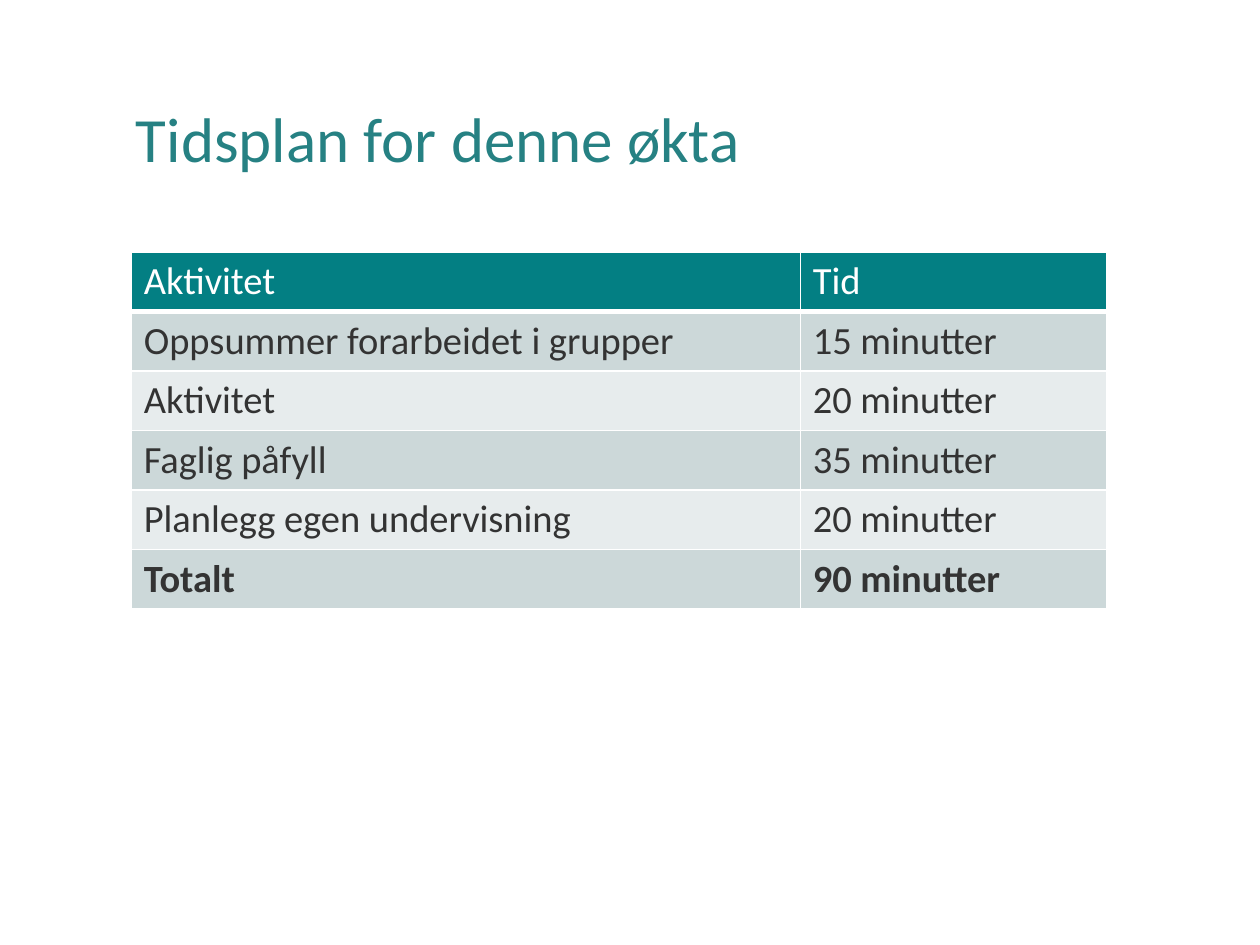
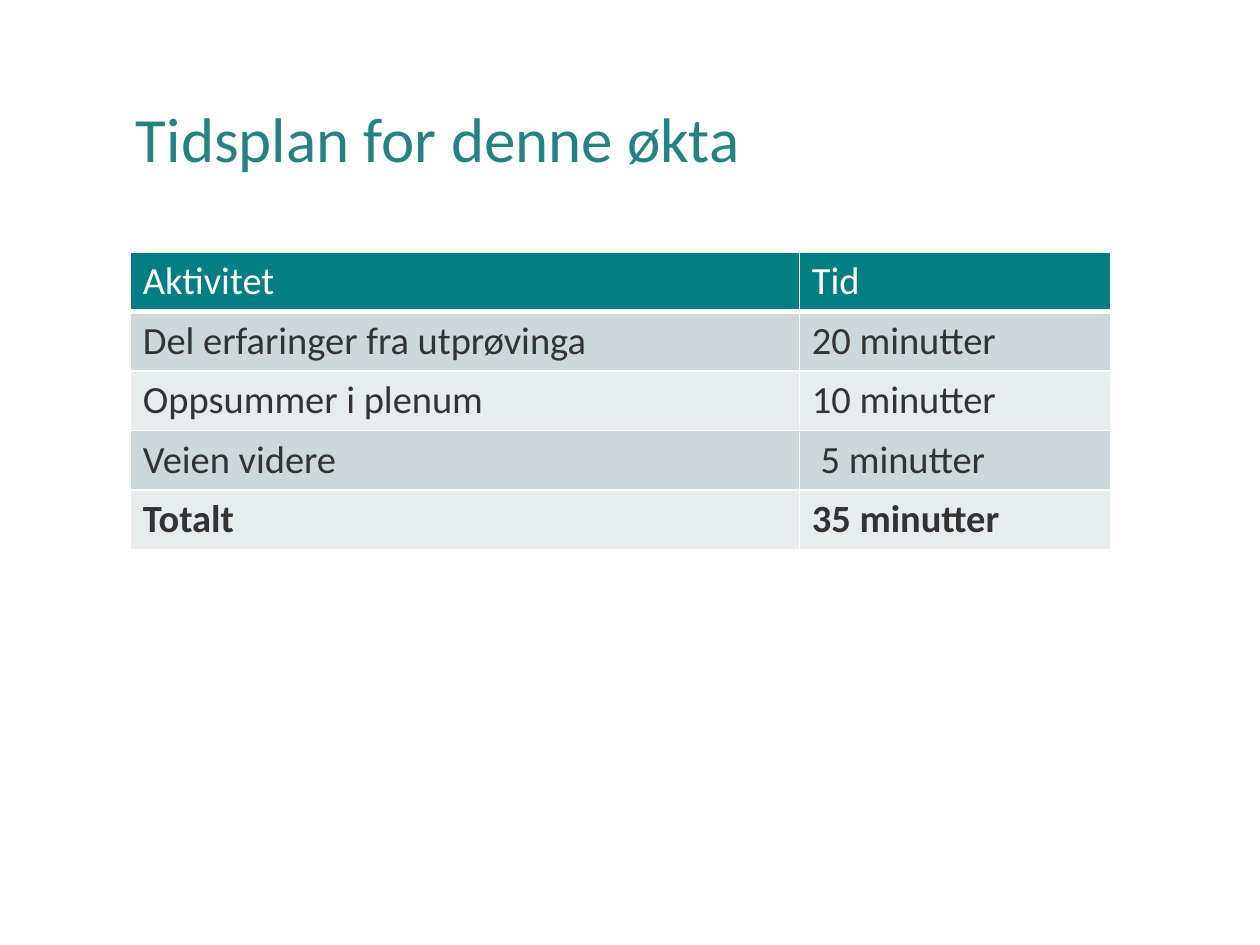
"""Build two session timetable slides."""
from dataclasses import dataclass

from pptx import Presentation
from pptx import util as u
from pptx.dml.color import RGBColor
from pptx.enum import text
from pptx.oxml.ns import qn
from lxml import etree


@dataclass(frozen=True)
class Theme:
    font: str = "Calibri"
    title_size: int = 36
    table_size: int = 22
    title: str = "268183"
    header: str = "037F83"
    bands: tuple = ("CCD8D9", "E7ECED")
    ink: str = "333333"
    white: str = "FFFFFF"


THEME = Theme()
TITLE = "Tidsplan for denne økta"
HEADER = ("Aktivitet", "Tid")
TABLE_TOP = 144
ROW_HEIGHT = 34
ACTIVITY_WIDTH = 382.3
CELL_MARGIN = 7.2
DIGIT_INDENT = 5
THIN, THICK = 1, 3

PREPARATION = [
    ("Oppsummer forarbeidet i grupper", "15 minutter"),
    ("Aktivitet", "20 minutter"),
    ("Faglig påfyll", "35 minutter"),
    ("Planlegg egen undervisning", "20 minutter"),
    ("Totalt", "90 minutter"),
]
FOLLOW_UP = [
    ("Del erfaringer fra utprøvinga", "20 minutter"),
    ("Oppsummer i plenum", "10 minutter"),
    ("Veien videre", "5 minutter"),
    ("Totalt", "35 minutter"),
]


def style_paragraph(para, size, color, bold=False):
    para.font.name = THEME.font
    para.font.size = u.Pt(size)
    para.font.bold = bold
    para.font.color.rgb = RGBColor.from_string(color)


def add_title(page, wording):
    box = page.shapes.add_textbox(u.Pt(70.6), u.Pt(28.8), u.Pt(597), u.Pt(104.4))
    frame = box.text_frame
    frame.word_wrap = True
    frame.vertical_anchor = text.MSO_ANCHOR.MIDDLE
    para = frame.paragraphs[0]
    para.text = wording
    para.line_spacing = 0.9
    style_paragraph(para, THEME.title_size, THEME.title)


def add_borders(cell, top, bottom):
    properties = cell._tc.get_or_add_tcPr()
    for side, width in (("L", THIN), ("R", THIN), ("T", top), ("B", bottom)):
        line = etree.SubElement(properties, qn(f"a:ln{side}"), w=str(u.Pt(width)))
        fill = etree.SubElement(line, qn("a:solidFill"))
        etree.SubElement(fill, qn("a:srgbClr"), val=THEME.white)


def fill_cell(cell, wording, fill, color, bold):
    cell.fill.solid()
    cell.fill.fore_color.rgb = RGBColor.from_string(fill)
    para = cell.text_frame.paragraphs[0]
    para.text = wording
    style_paragraph(para, THEME.table_size, color, bold)


def add_timetable(page, left, time_width, activities):
    rows = [HEADER, *activities]
    widths = (ACTIVITY_WIDTH, time_width)
    table = page.shapes.add_table(
        len(rows), len(widths), u.Pt(left), u.Pt(TABLE_TOP),
        u.Pt(sum(widths)), u.Pt(ROW_HEIGHT * len(rows))).table
    table.first_row = table.horz_banding = False
    for column, width in zip(table.columns, widths):
        column.width = u.Pt(width)
    for r, row in enumerate(rows):
        table.rows[r].height = u.Pt(ROW_HEIGHT)
        is_header = r == 0
        fill = THEME.header if is_header else THEME.bands[(r - 1) % 2]
        color = THEME.white if is_header else THEME.ink
        for c, wording in enumerate(row):
            cell = table.cell(r, c)
            add_borders(cell, THICK if r == 1 else THIN, THICK if is_header else THIN)
            fill_cell(cell, wording, fill, color, r == len(rows) - 1)
            if wording.split()[0] in "123456789":
                cell.margin_left = u.Pt(CELL_MARGIN + DIGIT_INDENT)


def main():
    deck = Presentation()
    deck.slide_width, deck.slide_height = u.Pt(720), u.Pt(540)
    for left, time_width, activities in ((75, 175, PREPARATION), (74.5, 177.8, FOLLOW_UP)):
        page = deck.slides.add_slide(deck.slide_layouts[6])
        add_title(page, TITLE)
        add_timetable(page, left, time_width, activities)
    deck.save("out.pptx")


if __name__ == "__main__":
    main()
